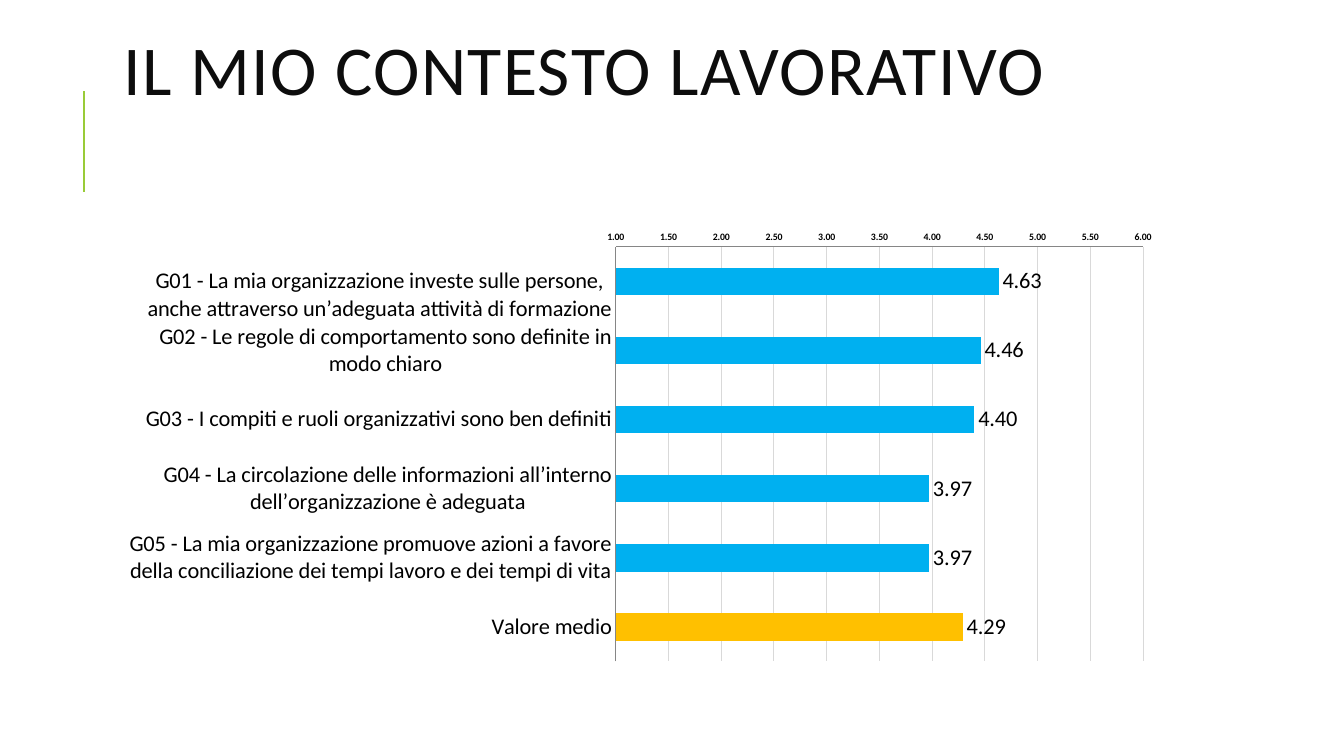
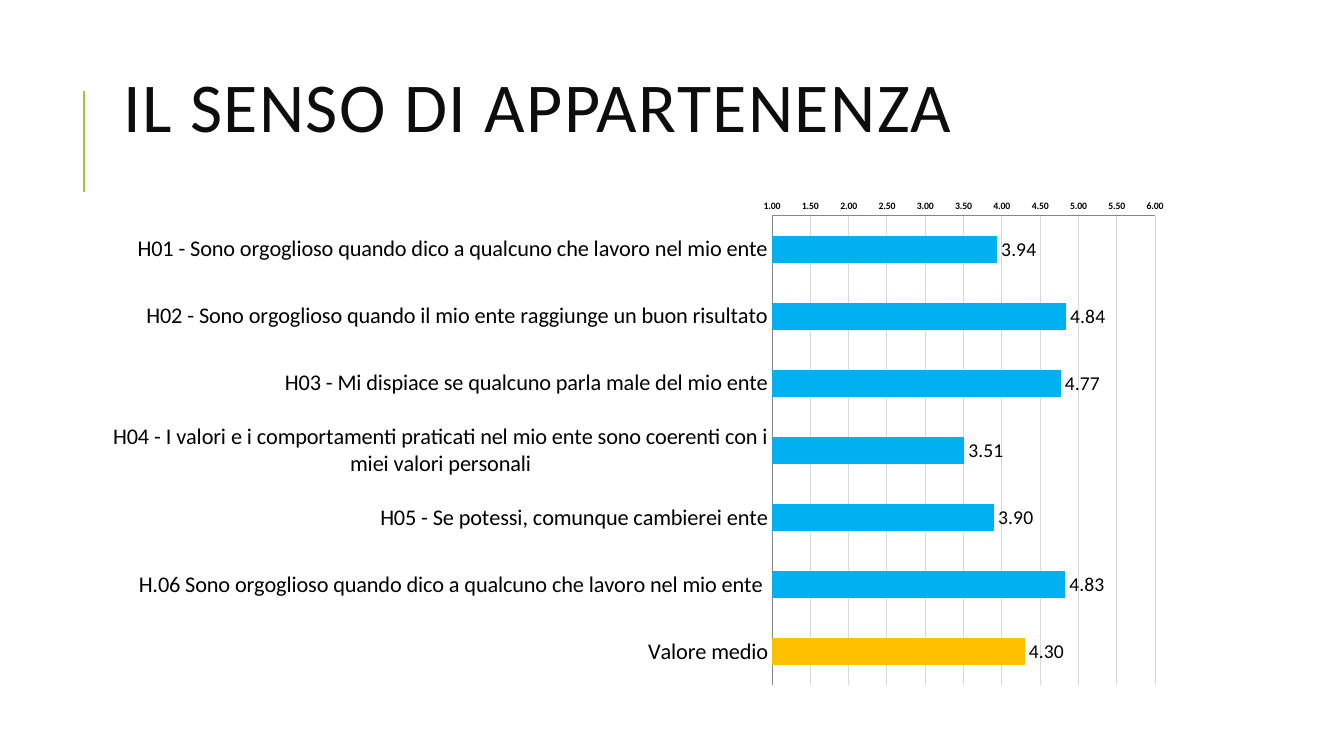
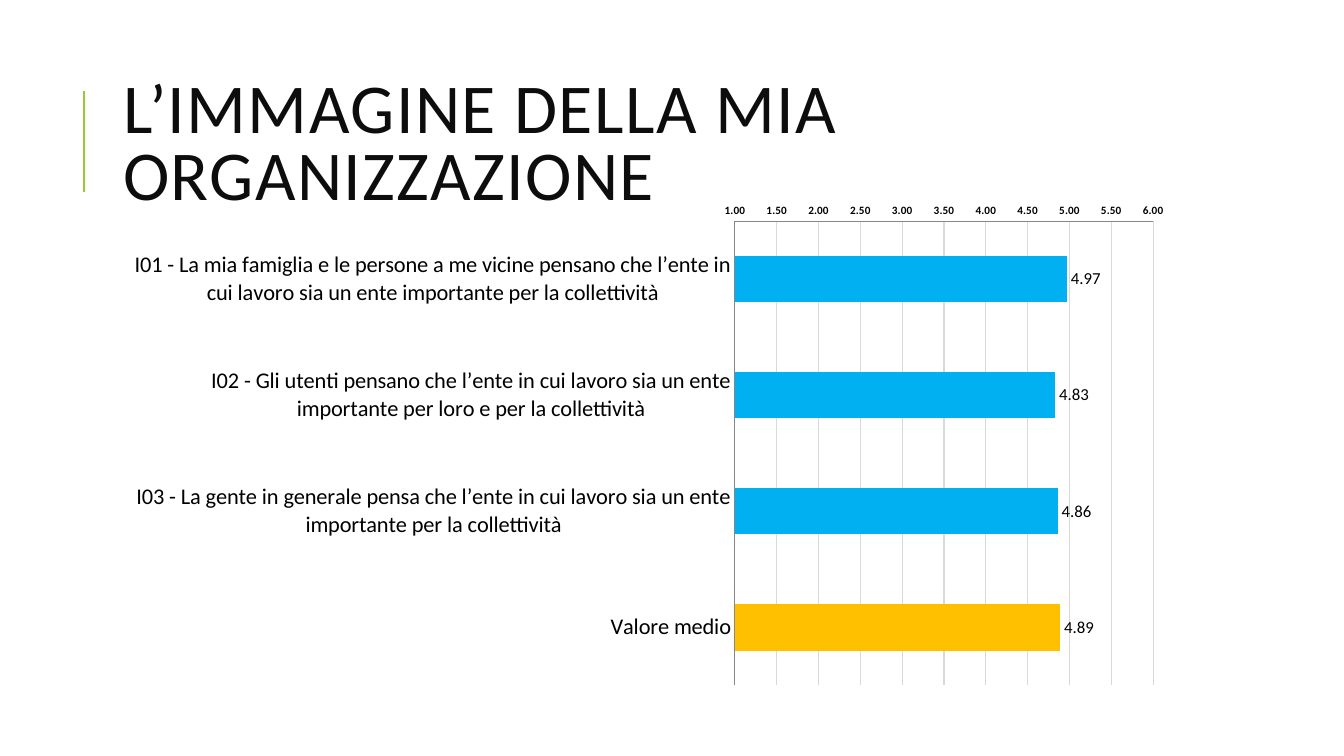
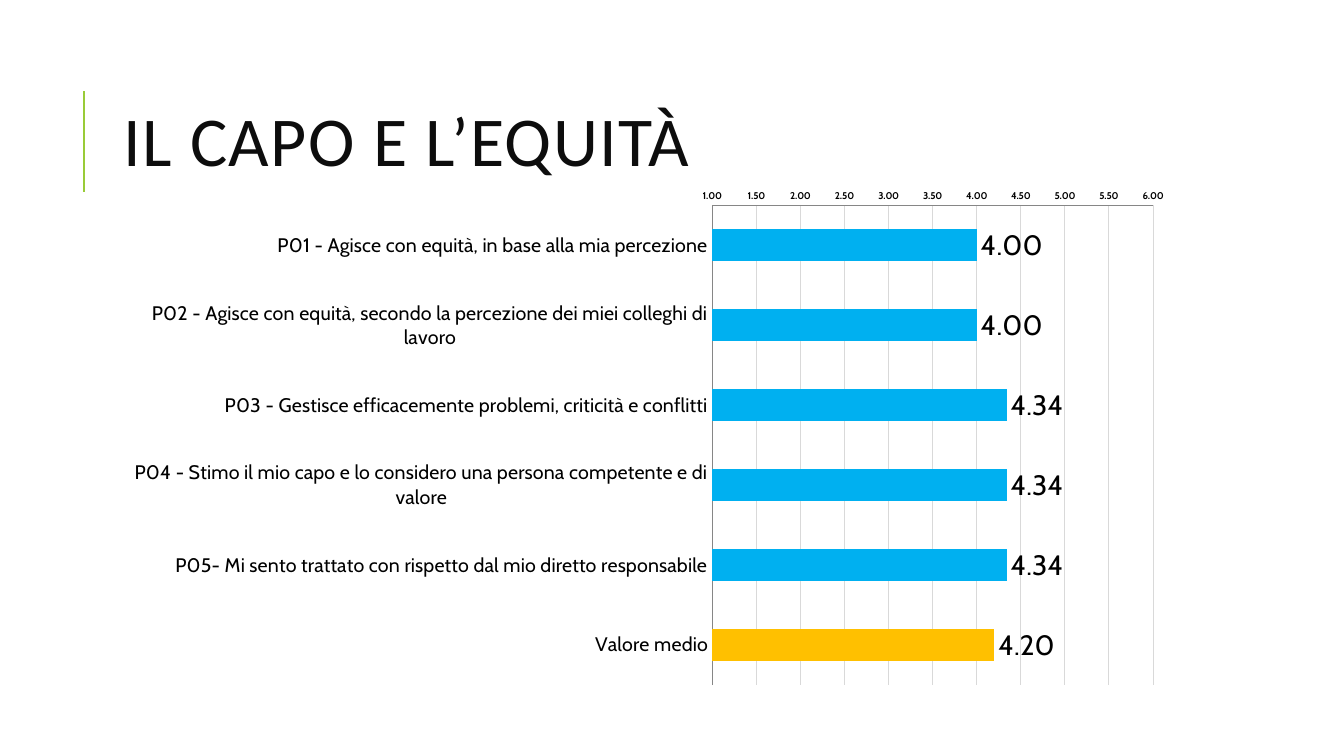
from lxml import etree
from pptx import Presentation
from pptx.chart.data import CategoryChartData
from pptx.dml.color import RGBColor
from pptx.enum.chart import XL_CHART_TYPE, XL_LABEL_POSITION, XL_TICK_MARK
from pptx.enum.shapes import MSO_CONNECTOR
from pptx.enum.text import MSO_ANCHOR, MSO_AUTO_SIZE, PP_ALIGN
from pptx.oxml import parse_xml
from pptx.oxml.ns import nsdecls, qn
from pptx.util import Inches, Pt

# Shared grid: 12 columns by 12 rows
WIDTH, HEIGHT = 13.33, 7.5
LEFT, SPAN = 1.01, 9.57
CHART_BOTTOM = 11.04

# Shared look
INK, BLACK = "0D0D0D", "000000"
GREEN, BLUE, GOLD = "99CB38", "00B0F0", "FFC000"
GRID_GREY, AXIS_GREY = "D9D9D9", "868686"
TITLE_FONT = "Calibri"

SLIDES = [
    dict(
        title="IL MIO CONTESTO LAVORATIVO", title_top=0.13, title_rows=2.13,
        chart_top=2.75, label_size=16, plot=(0.469, 0.141, 0.492, 0.794),
        rows=[
            ("\nG01 - La mia organizzazione investe sulle persone, "
             "anche attraverso un’adeguata attività di formazione", 4.63),
            ("G02 - Le regole di comportamento sono definite in modo chiaro", 4.46),
            ("G03 - I compiti e ruoli organizzativi sono ben definiti", 4.4),
            ("G04 - La circolazione delle informazioni all’interno "
             "dell’organizzazione è adeguata", 3.97),
            ("G05 - La mia organizzazione promuove azioni a favore della "
             "conciliazione dei tempi lavoro e dei tempi di vita", 3.97),
            ("Valore medio", 4.29),
        ],
    ),
    dict(
        title="IL SENSO DI APPARTENENZA", title_rows=1.54,
        chart_top=3.02, label_size=14,
        rows=[
            ("H01 - Sono orgoglioso quando dico a qualcuno che lavoro nel mio ente", 3.94),
            ("H02 - Sono orgoglioso quando il mio ente raggiunge un buon risultato", 4.84),
            ("H03 - Mi dispiace se qualcuno parla male del mio ente", 4.77),
            ("H04 - I valori e i comportamenti praticati nel mio ente sono "
             "coerenti con i miei valori personali", 3.51),
            ("H05 - Se potessi, comunque cambierei ente", 3.9),
            ("H.06 Sono orgoglioso quando dico a qualcuno che lavoro nel mio ente ", 4.83),
            ("Valore medio", 4.3),
        ],
    ),
    dict(
        title="L’IMMAGINE DELLA MIA ORGANIZZAZIONE",
        chart_top=3.07, label_size=12, scale_size=8,
        rows=[
            ("I01 - La mia famiglia e le persone a me vicine pensano che l’ente "
             "in cui lavoro sia un ente importante per la collettività", 4.97),
            ("I02 - Gli utenti pensano che l’ente in cui lavoro sia un ente "
             "importante per loro e per la collettività", 4.83),
            ("I03 - La gente in generale pensa che l’ente in cui lavoro sia un "
             "ente importante per la collettività", 4.86),
            ("Valore medio", 4.89),
        ],
    ),
    dict(
        title="IL CAPO E L’EQUITÀ",
        chart_top=2.85, label_size=20, category_size=14, font_name="Cabin",
        rows=[
            ("P01 - Agisce con equità, in base alla mia percezione", 4),
            ("P02 - Agisce con equità, secondo la percezione dei miei colleghi di lavoro", 4),
            ("P03 - Gestisce efficacemente problemi, criticità e conflitti", 4.34),
            ("P04 - Stimo il mio capo e lo considero una persona competente "
             "e di valore", 4.34),
            ("P05- Mi sento trattato con rispetto dal mio diretto responsabile", 4.34),
            ("Valore medio", 4.2),
        ],
    ),
]


def color(value):
    return RGBColor.from_string(value)


def column(count):
    return Inches(count * WIDTH / 12)


def row(count):
    return Inches(count * HEIGHT / 12)


def style_font(font, name, size, ink=BLACK, bold=False):
    font.name, font.size, font.bold = name, Pt(size), bold
    font.color.rgb = color(ink)


def style_line(line, ink, width=0.75):
    line.color.rgb = color(ink)
    line.width = Pt(width)


def add_accent(layout, page):
    """Draw the green rule and hand it to the layout all pages use."""
    accent = page.shapes.add_connector(
        MSO_CONNECTOR.STRAIGHT, column(0.75), row(3.04), column(0.75), row(1.44))
    style_line(accent.line, GREEN, 1.5)
    etree.SubElement(accent.element.spPr, qn("a:effectLst"))
    layout.shapes.element.append(accent.element)


def set_title(page, text, top, rows):
    title = page.shapes.title
    title.left, title.top = column(LEFT), row(top)
    title.width, title.height = column(SPAN), row(rows)
    frame = title.text_frame
    frame.auto_size, frame.word_wrap = MSO_AUTO_SIZE.NONE, True
    frame.vertical_anchor = MSO_ANCHOR.MIDDLE
    para = frame.paragraphs[0]
    para.alignment, para.line_spacing = PP_ALIGN.LEFT, 0.8
    span = para.add_run()
    span.text = text
    style_font(span.font, TITLE_FONT, 50, INK)
    span.font._element.set("spc", "100")


def place_plot(chart, shares):
    """Fix the inner plot area as shares of the chart: x, y, width, height."""
    sizes = "".join(f'<c:{tag} val="{share}"/>'
                    for tag, share in zip("xywh", shares))
    layout = parse_xml(
        f'<c:layout {nsdecls("c")}><c:manualLayout><c:layoutTarget val="inner"/>'
        f'<c:xMode val="edge"/><c:yMode val="edge"/>{sizes}'
        '</c:manualLayout></c:layout>')
    area = chart.element.find(".//" + qn("c:plotArea"))
    for old in area.findall(qn("c:layout")):
        area.remove(old)
    area.insert(0, layout)


def style_axes(chart, font_name, category_size, scale_size):
    category, scale = chart.category_axis, chart.value_axis
    for axis, size in ((category, category_size), (scale, scale_size)):
        axis.major_tick_mark = axis.minor_tick_mark = XL_TICK_MARK.NONE
        style_line(axis.format.line, AXIS_GREY)
        style_font(axis.tick_labels.font, font_name, size, bold=axis is scale)
    category.reverse_order = True
    category.has_major_gridlines = False
    scale.minimum_scale, scale.maximum_scale, scale.major_unit = 1, 6, 0.5
    scale.has_major_gridlines = True
    style_line(scale.major_gridlines.format.line, GRID_GREY)
    scale.tick_labels.number_format = "0.00"
    scale.tick_labels.number_format_is_linked = False


def add_scores(page, rows, top, label_size, category_size=16, scale_size=7,
               font_name="Calibri", plot=None):
    """Bar chart of scores; the last bar, the mean, stands out in gold."""
    names, scores = zip(*rows)
    data = CategoryChartData(number_format="0.00")
    data.categories = names
    data.add_series("Series 1", scores)
    chart = page.shapes.add_chart(
        XL_CHART_TYPE.BAR_CLUSTERED, column(LEFT), row(top),
        column(SPAN), row(CHART_BOTTOM - top), data).chart
    chart.has_legend = chart.has_title = False
    style_font(chart.font, font_name, 10)
    style_axes(chart, font_name, category_size, scale_size)

    # Bars
    bars = chart.plots[0]
    bars.gap_width, bars.vary_by_categories = 150, False
    series = bars.series[0]
    mean = series.points[len(rows) - 1]
    for part, ink in ((series, BLUE), (mean, GOLD)):
        part.format.fill.solid()
        part.format.fill.fore_color.rgb = color(ink)

    # Value labels
    labels = series.data_labels
    labels.show_value = True
    labels.position = XL_LABEL_POSITION.OUTSIDE_END
    labels.number_format, labels.number_format_is_linked = "0.00", False
    style_font(labels.font, font_name, label_size)
    if plot:
        place_plot(chart, plot)


def add_page(deck, layout, title, rows, chart_top, title_top=1.02,
             title_rows=2.62, **chart_format):
    page = deck.slides.add_slide(layout)
    set_title(page, title, title_top, title_rows)
    add_scores(page, rows, chart_top, **chart_format)
    return page


def main():
    deck = Presentation()
    deck.slide_width, deck.slide_height = Inches(WIDTH), Inches(HEIGHT)
    layout = deck.slide_layouts.get_by_name("Title Only")
    pages = [add_page(deck, layout, **content) for content in SLIDES]
    add_accent(layout, pages[0])
    deck.save("out.pptx")


if __name__ == "__main__":
    main()
